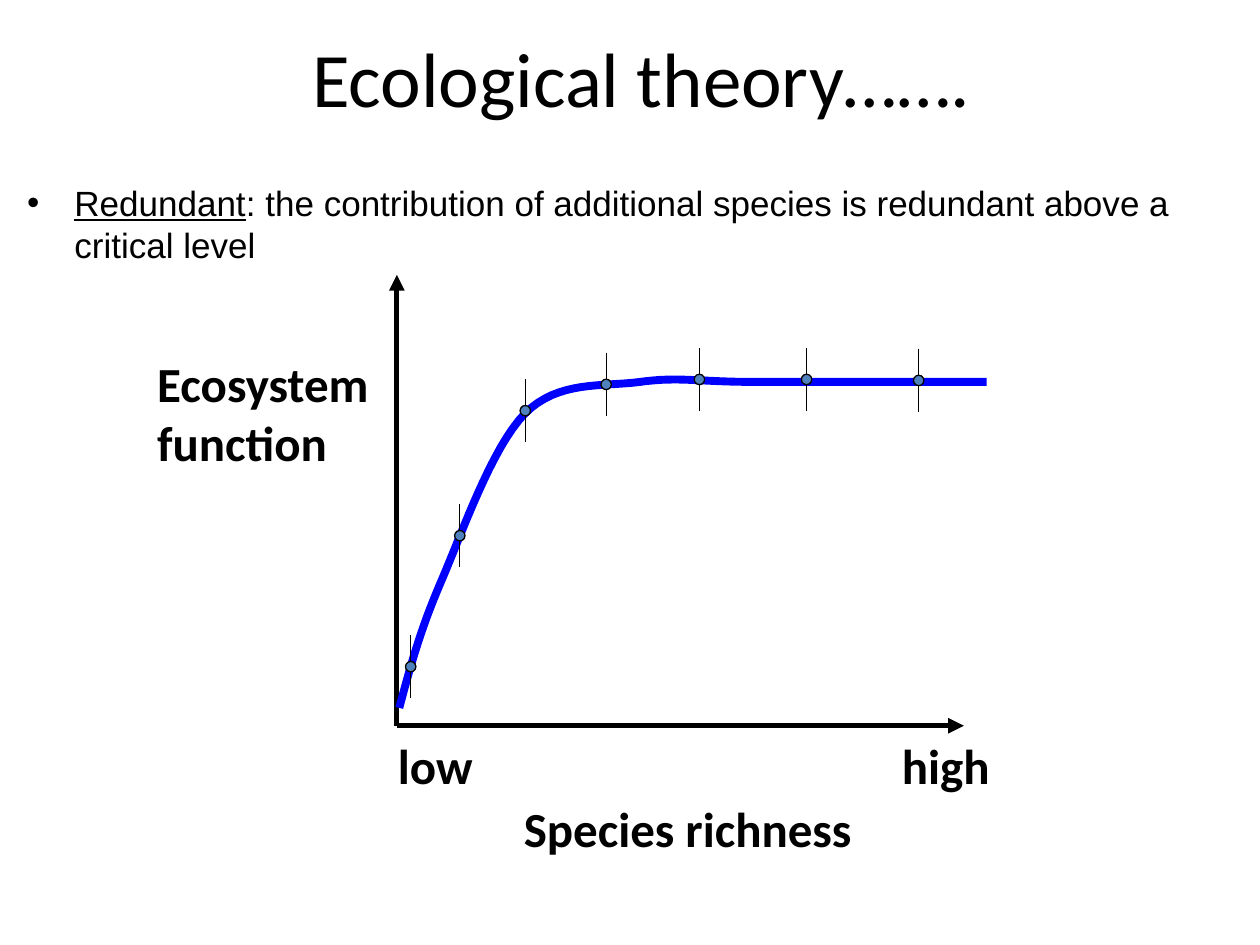
from dataclasses import dataclass

from pptx import Presentation
from pptx.dml.color import RGBColor
from pptx.enum.shapes import MSO_CONNECTOR, MSO_SHAPE
from pptx.enum.text import MSO_ANCHOR, MSO_AUTO_SIZE, PP_ALIGN
from pptx.oxml.ns import qn
from pptx.util import Cm, Pt
from lxml import etree

LINE = MSO_CONNECTOR.STRAIGHT
OVAL = MSO_SHAPE.OVAL
MIDDLE = MSO_ANCHOR.MIDDLE
GROW = MSO_AUTO_SIZE.SHAPE_TO_FIT_TEXT
CENTER = PP_ALIGN.CENTER


@dataclass(frozen=True)
class Theme:
    ink: RGBColor = RGBColor(0, 0, 0)
    curve: RGBColor = RGBColor(0, 0, 255)
    dot: RGBColor = RGBColor(0x4F, 0x81, 0xBD)
    head: str = "Calibri"
    body: str = "Arial"
    title: int = 44
    text: int = 20
    label: int = 28
    axis: float = 3
    bold: float = 4.5
    thin: float = 0.75


def apply(item, form):
    for name, value in form.items():
        setattr(item, name, value)


def bezier(start, parts, steps=16):
    points = []
    for a, b, end in parts:
        for i in range(1, steps + 1):
            t = i / steps
            u = 1 - t
            points.append(tuple(
                u**3 * p + 3 * u * u * t * q + 3 * u * t * t * r + t**3 * s
                for p, q, r, s in zip(start, a, b, end)))
        start = end
    return points


class Board:
    def __init__(self, slide, theme):
        self.shapes = slide.shapes
        self.theme = theme

    def text(self, box, lines, font, frame=None, para=None):
        body = self.shapes.add_textbox(*map(Cm, box)).text_frame
        apply(body, {"word_wrap": True, **(frame or {})})
        for i, line in enumerate(lines):
            item = body.add_paragraph() if i else body.paragraphs[0]
            apply(item, para or {})
            for words, form in line:
                run = item.add_run()
                run.text = words
                apply(run.font, {**font, **form})
                run.font.color.rgb = self.theme.ink
        return body.paragraphs

    def label(self, box, *lines):
        font = {"name": self.theme.head, "size": Pt(self.theme.label), "bold": True}
        frame = {"word_wrap": False, "auto_size": GROW}
        return self.text(box, [[(line, {})] for line in lines], font, frame)

    def bullet(self, item, indent):
        prop = item._p.get_or_add_pPr()
        prop.set("marL", str(Cm(indent)))
        prop.set("indent", str(-Cm(indent)))
        etree.SubElement(prop, qn("a:buFont"), typeface=self.theme.body)
        etree.SubElement(prop, qn("a:buChar"), char="•")

    def tab(self, item, place):
        tabs = etree.SubElement(item._p.get_or_add_pPr(), qn("a:tabLst"))
        etree.SubElement(tabs, qn("a:tab"), pos=str(Cm(place)), algn="l")

    def stroke(self, shape, color, width):
        shape.line.color.rgb = color
        shape.line.width = Pt(width)

    def line(self, start, end, width, arrow=False):
        link = self.shapes.add_connector(LINE, *map(Cm, start + end))
        self.stroke(link, self.theme.ink, width)
        if arrow:
            etree.SubElement(link.line._get_or_add_ln(), qn("a:tailEnd"), type="triangle")
        etree.SubElement(link._element.spPr, qn("a:effectLst"))

    def dot(self, x, y, size):
        dot = self.shapes.add_shape(
            OVAL, *map(Cm, (x - size / 2, y - size / 2, size, size)))
        dot.shadow.inherit = False
        dot.fill.solid()
        dot.fill.fore_color.rgb = self.theme.dot
        self.stroke(dot, self.theme.ink, self.theme.thin)

    def curve(self, start, parts):
        path = self.shapes.build_freeform(*map(Cm, start))
        path.add_line_segments(
            [(Cm(x), Cm(y)) for x, y in bezier(start, parts)], close=False)
        shape = path.convert_to_shape()
        shape.shadow.inherit = False
        shape.fill.background()
        self.stroke(shape, self.theme.curve, self.theme.bold)


def main():
    deck = Presentation()
    apply(deck, {"slide_width": Cm(25.4), "slide_height": Cm(19.05)})
    theme = Theme()
    board = Board(deck.slides.add_slide(deck.slide_layouts[6]), theme)

    board.text((1.5, -0.05, 22.86, 3.18), [[("Ecological theory…….", {})]],
               {"name": theme.head, "size": Pt(theme.title)},
               {"vertical_anchor": MIDDLE}, {"alignment": CENTER})
    claim = [("Redundant", {"underline": True}),
             (": the contribution of additional species is redundant"
              " above a critical level", {})]
    items = board.text((0.3, 3.53, 25, 1.32), [claim],
                       {"name": theme.body, "size": Pt(theme.text)},
                       para={"space_before": Pt(4)})
    board.bullet(items[0], 0.95)

    origin = (8, 14.63)
    for end in ((8, 5.54), (19.43, 14.63)):
        board.line(origin, end, theme.axis, arrow=True)

    board.label((2.92, 7.01, 5.21, 2.62), "Ecosystem", "function")
    board.label((10.31, 15.98, 7.29, 1.45), "Species richness")
    scale = board.label((7.77, 14.71, 12.55, 1.45), "low\thigh")
    board.tab(scale[0], 10.16)

    board.curve((8.05, 14.27), [
        ((8.26, 13.49), (8.46, 12.73), (8.89, 11.73)),
        ((9.32, 10.74), (9.91, 9.02), (10.59, 8.33)),
        ((11.25, 7.67), (12.14, 7.8), (12.9, 7.7)),
        ((13.69, 7.59), (14.07, 7.7), (15.24, 7.7)),
        ((16.41, 7.7), (18.16, 7.7), (19.89, 7.7)),
    ])

    reach = 0.64
    for x, y in ((8.28, 13.44), (9.27, 10.8), (10.59, 8.28), (12.22, 7.75),
                 (14.1, 7.65), (16.26, 7.65), (18.52, 7.67)):
        board.line((x, y - reach), (x, y + reach), theme.thin)
        board.dot(x, y, 0.21)

    deck.save("out.pptx")


if __name__ == "__main__":
    main()
